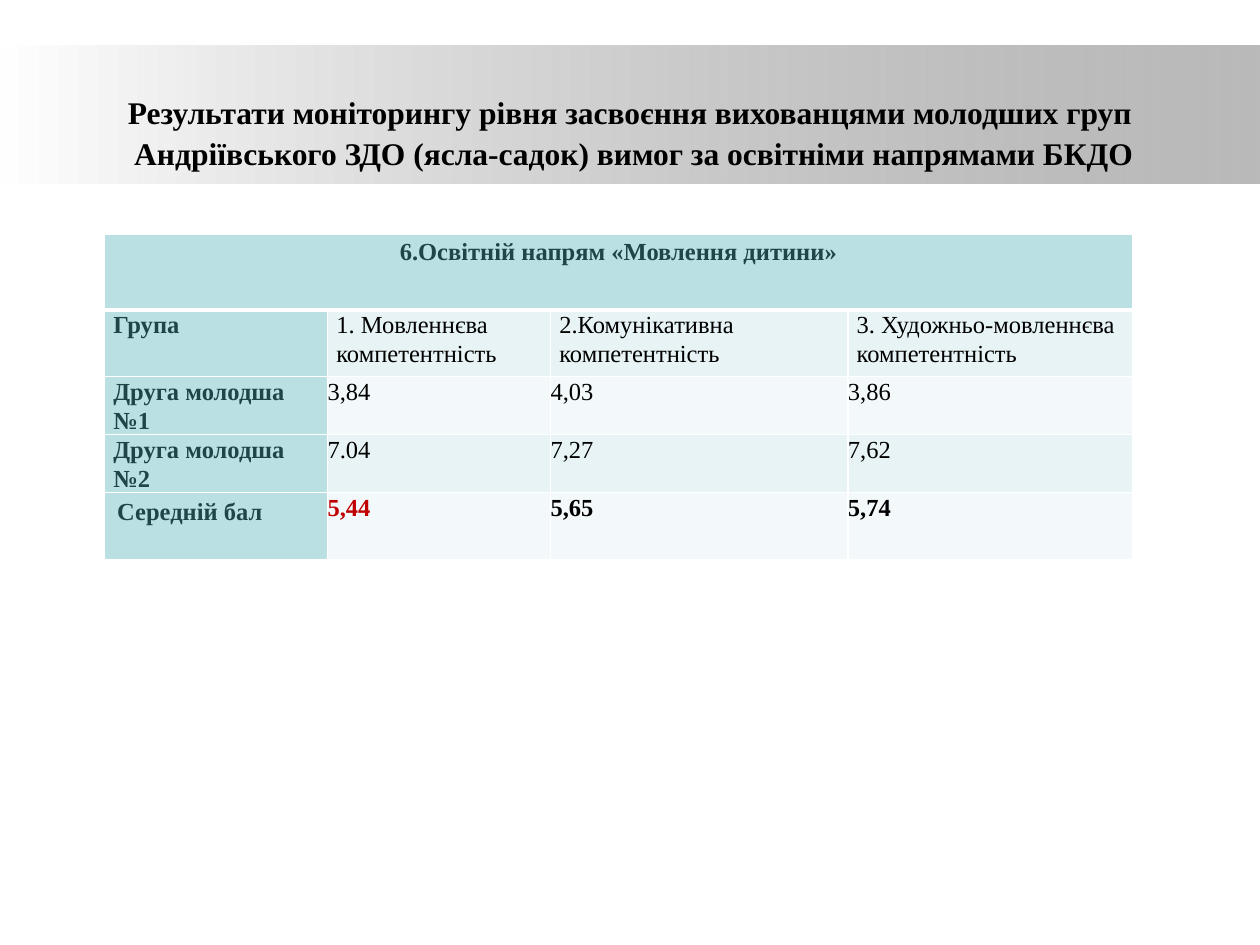
from dataclasses import dataclass

from lxml import etree
from pptx import Presentation
from pptx.dml.color import RGBColor
from pptx.enum.shapes import MSO_SHAPE
from pptx.enum.text import MSO_ANCHOR, MSO_AUTO_SIZE, PP_ALIGN
from pptx.oxml.ns import qn
from pptx.util import Inches, Pt

RECTANGLE = MSO_SHAPE.RECTANGLE
TOP, MIDDLE = MSO_ANCHOR.TOP, MSO_ANCHOR.MIDDLE
LEFT, CENTER = PP_ALIGN.LEFT, PP_ALIGN.CENTER
NO_AUTOFIT = MSO_AUTO_SIZE.NONE


@dataclass(frozen=True)
class Theme:
    font: str = "Times New Roman"
    title_size: int = 18
    table_size: int = 14
    text: str = "000000"
    heading: str = "1E4649"
    alert: str = "C00000"
    white: str = "FFFFFF"
    band_end: str = "808080"
    heading_fill: str = "BBE0E3"
    row_fills: tuple = ("E7F3F4", "F3F9FA")


THEME = Theme()
TITLE = ("Результати моніторингу рівня засвоєння вихованцями молодших груп\v"
         " Андріївського ЗДО (ясла-садок) вимог за освітніми напрямами БКДО")
ROWS = [
    ["6.Освітній напрям «Мовлення дитини»"],
    ["Група", "1. Мовленнєва компетентність", "2.Комунікативна компетентність",
     "3. Художньо-мовленнєва компетентність"],
    ["Друга молодша №1", "3,84", "4,03", "3,86"],
    ["Друга молодша №2", "7.04", "7,27", "7,62"],
    ["Середній бал", "5,44", "5,65", "5,74"],
]
LAST_ROW = len(ROWS) - 1
LOW_SCORE = (LAST_ROW, 1)
COLUMN_WIDTHS = [1.77, 1.77, 2.36, 2.26]
ROW_HEIGHTS = [0.6, 0.53, 0.46, 0.46, 0.53]
TABLE_LEFT, TABLE_TOP = 0.83, 1.86


def place(shape, left, top, width, height):
    shape.left, shape.top = Inches(left), Inches(top)
    shape.width, shape.height = Inches(width), Inches(height)


def format_paragraph(paragraph, size, color, bold, align, spacing, after):
    paragraph.alignment = align
    paragraph.line_spacing = spacing
    paragraph.space_after = Pt(after)
    font = paragraph.font
    font.name, font.size, font.bold = THEME.font, Pt(size), bold
    font.color.rgb = RGBColor.from_string(color)


def add_title(slide):
    title = slide.shapes.title
    place(title, 0.5, 0.3, 9, 1.48)
    frame = title.text_frame
    frame.text = TITLE
    frame.auto_size, frame.vertical_anchor = NO_AUTOFIT, MIDDLE
    format_paragraph(frame.paragraphs[0], THEME.title_size, THEME.text, True, CENTER, 1.07, 8)
    return title


def add_band(slide, title):
    band = slide.shapes.add_shape(RECTANGLE, 0, 0, 0, 0)
    place(band, 0, 0.36, 10, 1.1)
    band.shadow.inherit = False
    band.line.fill.background()
    band.fill.gradient()
    band.fill.gradient_angle = 0
    for stop, color in zip(band.fill.gradient_stops, (THEME.white, THEME.band_end)):
        stop.color.rgb = RGBColor.from_string(color)
    end_color = list(band.element.iter(qn("a:srgbClr")))[-1]
    etree.SubElement(end_color, qn("a:alpha"), val="54000")
    title.element.addprevious(band.element)


def set_borders(cell, row):
    widths = {"L": 1, "R": 1, "T": 3 if row == 1 else 1, "B": 3 if row == 0 else 1}
    properties = cell._tc.get_or_add_tcPr()
    for position, (side, width) in enumerate(widths.items()):
        line = etree.Element(qn(f"a:ln{side}"), w=str(Pt(width)))
        fill = etree.SubElement(line, qn("a:solidFill"))
        etree.SubElement(fill, qn("a:srgbClr"), val=THEME.white)
        properties.insert(position, line)


def format_cell(cell, row, column):
    is_heading = row == 0 or column == 0
    is_score = row > 1 and column > 0
    is_average_label = (row, column) == (LAST_ROW, 0)
    side, edge = (0.1, 0.05) if is_average_label else (0 if is_score else 0.07, 0)
    cell.margin_left = cell.margin_right = Inches(side)
    cell.margin_top = cell.margin_bottom = Inches(edge)
    cell.vertical_anchor = TOP
    cell.fill.solid()
    fill = THEME.heading_fill if is_heading else THEME.row_fills[(row - 1) % 2]
    cell.fill.fore_color.rgb = RGBColor.from_string(fill)
    set_borders(cell, row)
    color = THEME.heading if is_heading else THEME.text
    if (row, column) == LOW_SCORE:
        color = THEME.alert
    spacing = 1.15 if row == 0 else 1.0 if is_average_label else 1.07
    format_paragraph(cell.text_frame.paragraphs[0], THEME.table_size, color,
                     is_heading or row == LAST_ROW, CENTER if row == 0 else LEFT,
                     spacing, 0 if is_score or is_average_label else 8)


def add_results_table(slide):
    table = slide.shapes.add_table(
        len(ROWS), len(COLUMN_WIDTHS), Inches(TABLE_LEFT), Inches(TABLE_TOP),
        Inches(sum(COLUMN_WIDTHS)), Inches(sum(ROW_HEIGHTS))).table
    for column, width in zip(table.columns, COLUMN_WIDTHS):
        column.width = Inches(width)
    for row, height in zip(table.rows, ROW_HEIGHTS):
        row.height = Inches(height)
    table.cell(0, 0).merge(table.cell(0, len(COLUMN_WIDTHS) - 1))
    for row, texts in enumerate(ROWS):
        for column, text in enumerate(texts):
            cell = table.cell(row, column)
            cell.text = text
            format_cell(cell, row, column)


def main():
    presentation = Presentation()
    presentation.slide_width, presentation.slide_height = Inches(10), Inches(7.5)
    slide = presentation.slides.add_slide(presentation.slide_layouts[5])
    title = add_title(slide)
    add_band(slide, title)
    add_results_table(slide)
    presentation.save("out.pptx")


if __name__ == "__main__":
    main()
